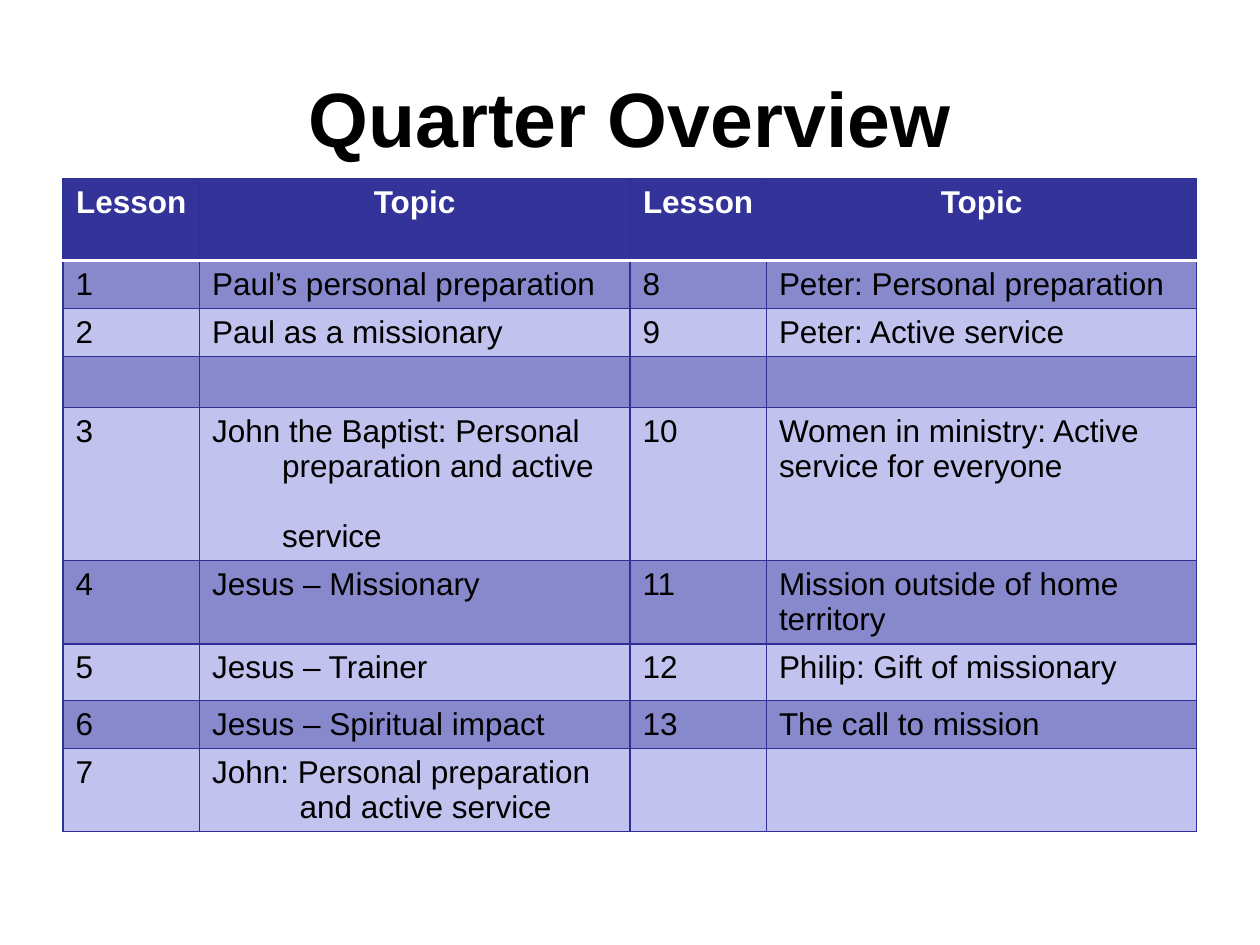
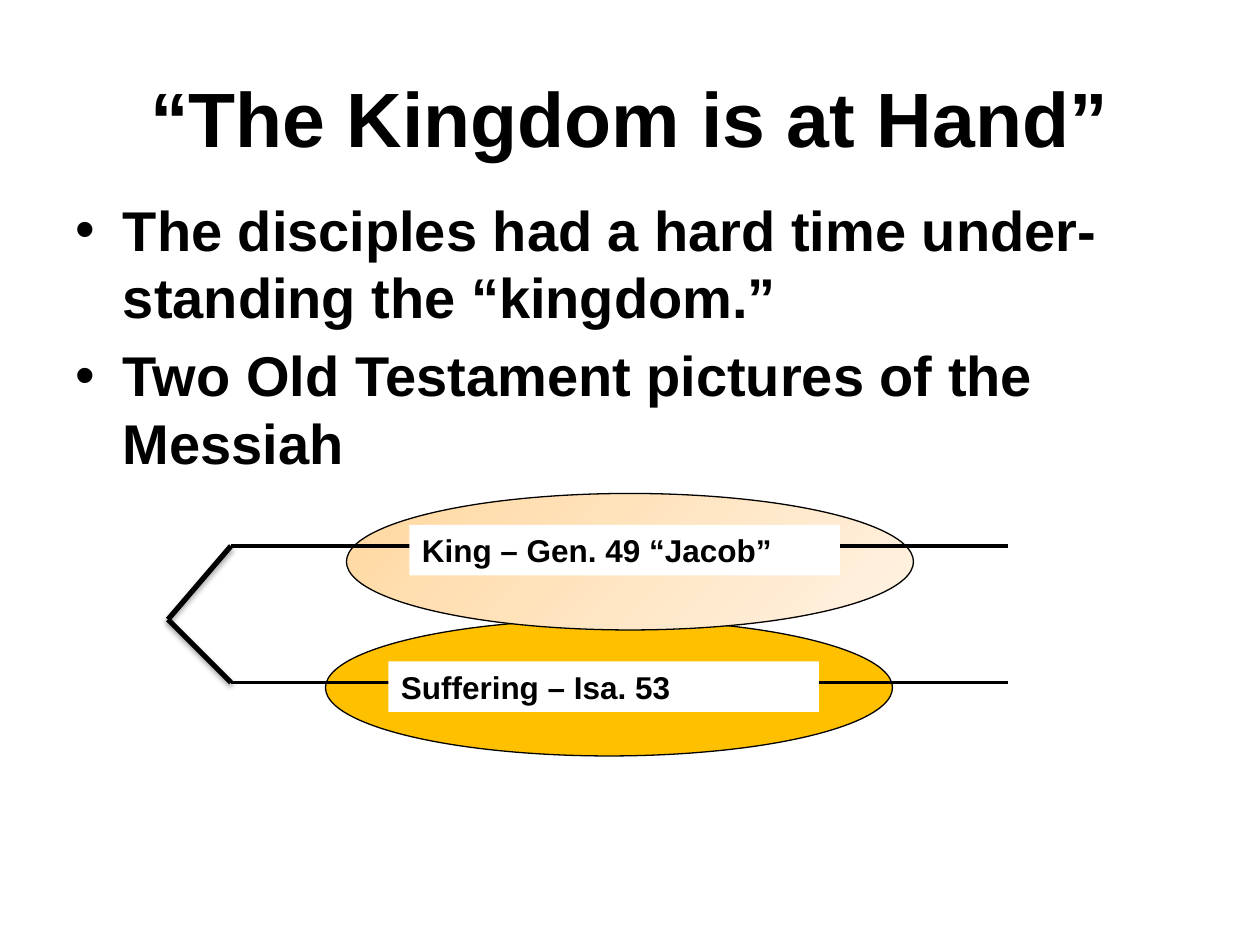
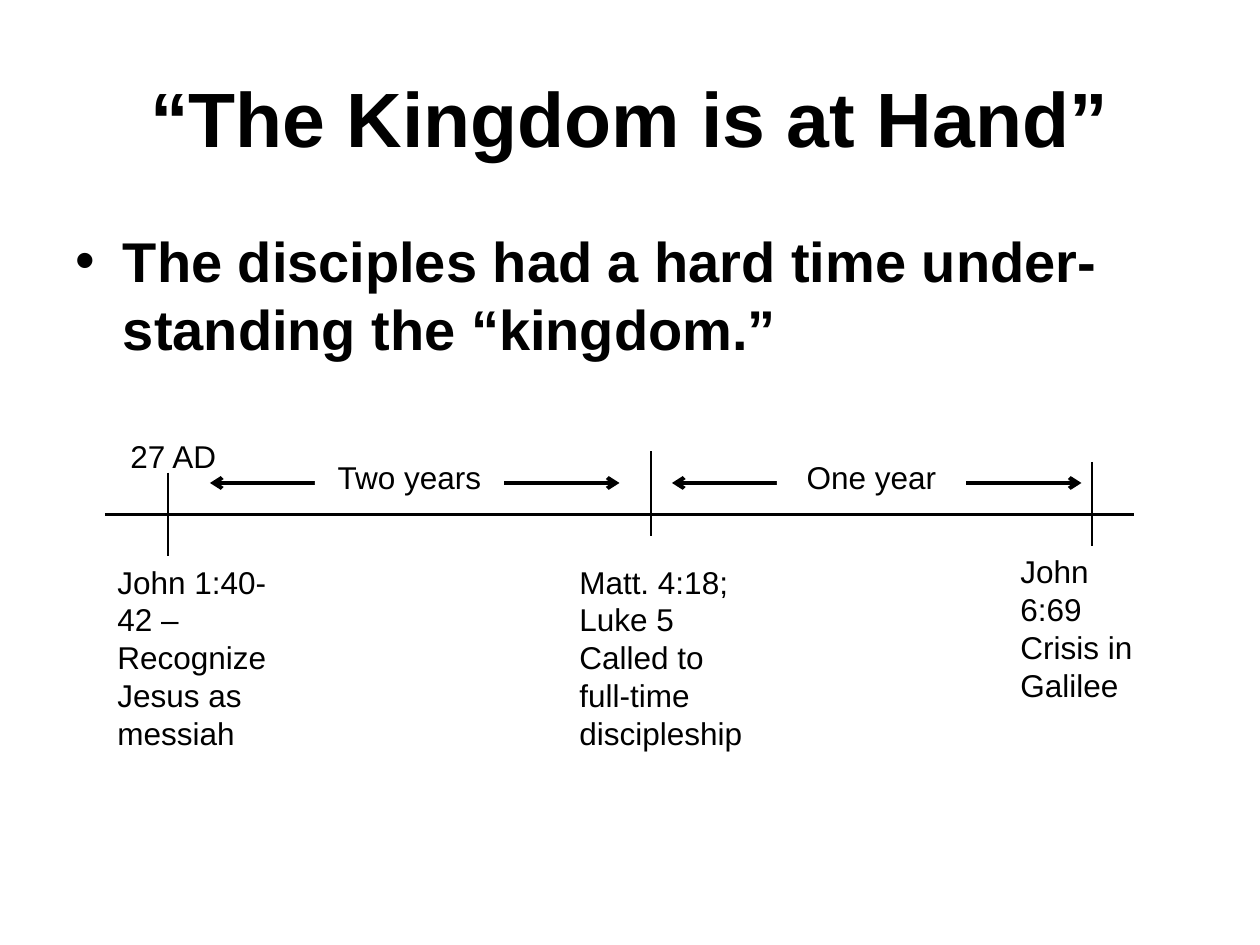
from dataclasses import dataclass

from lxml import etree
from pptx import Presentation
from pptx.dml.color import RGBColor
from pptx.enum import shapes, text
from pptx.oxml.ns import qn
from pptx.util import Emu, Inches, Pt

CELL = Inches(1) // 12  # the slide is a grid of 120 columns by 90 rows


@dataclass(frozen=True)
class Theme:
    font: str = "Arial"
    ink: str = "000000"
    paper: str = "FFFFFF"
    head: str = "333399"
    dark: str = "8888CC"
    light: str = "C2C2EE"
    edge: str = "2F2F98"
    gold: str = "FFC000"
    peach: tuple[str, str] = ("FFD8A0", "FFF2E3")
    title: int = 44
    body: int = 32
    small: int = 18
    thin: float = 0.75
    rule: float = 2.25
    thick: float = 3


THEME = Theme()


@dataclass(frozen=True)
class Box:
    """A place on the grid, in columns and rows."""
    col: float
    row: float
    wide: float
    high: float

    def place(self) -> tuple[Emu, ...]:
        return tuple(grid(n) for n in (self.col, self.row, self.wide, self.high))


@dataclass(frozen=True)
class Label:
    box: Box
    words: str
    bold: bool = False
    center: bool = False
    plate: bool = False


@dataclass(frozen=True)
class Line:
    start: tuple[float, float]
    end: tuple[float, float]
    width: float = THEME.rule
    arrows: bool = False
    shadow: bool = False


@dataclass(frozen=True)
class Topic:
    """A cell whose later lines are set in by some points."""
    words: str
    inset: float = 0
    gap: float = 0  # space before the last line


TITLE = Box(6, 3.6, 108, 15)
TABLE = Box(6, 17, 108, 61.2)
COLS = (13, 41, 13, 41)
KINGDOM = "“The Kingdom is at Hand”"
HARD = "The disciples had a hard time under-standing the “kingdom.”"

LESSONS = [
    (0.65, "Lesson", "Topic", "Lesson", "Topic"),
    (0.35, "1", "Paul’s personal preparation", "8", "Peter: Personal preparation"),
    (0.35, "2", "Paul as a missionary", "9", "Peter: Active service"),
    (0.35, "", "", "", ""),
    (0.88, "3", Topic("John the Baptist: Personal\npreparation and active\nservice", 40, 20),
     "10", "Women in ministry: Active service for everyone"),
    (0.62, "4", "Jesus – Missionary", "11", "Mission outside of home territory"),
    (0.45, "5", "Jesus – Trainer", "12", "Philip: Gift of missionary"),
    (0.35, "6", "Jesus – Spiritual impact", "13", "The call to mission"),
    (0.62, "7", Topic("John: Personal preparation\nand active service", 50), "", ""),
]

FORK = [
    Line((22, 52), (96, 52)),
    Line((22, 65), (96, 65)),
    Line((22, 52), (16, 59), THEME.thick, shadow=True),
    Line((16, 59), (22, 65), THEME.thick, shadow=True),
]
SIDES = [
    Label(Box(39, 50, 41, 4.8), "King – Gen. 49 “Jacob”", bold=True, plate=True),
    Label(Box(37, 63, 41, 4.8), "Suffering – Isa. 53", bold=True, plate=True),
]

SPANS = [Line((col, 46), (col + 39, 46), arrows=True) for col in (20, 64)]
TICKS = [Line((col, row), (col, row + 8), THEME.thin)
         for col, row in ((16, 45), (62, 43), (104, 44))]
AXIS = Line((10, 49), (108, 49))
EVENTS = [
    Label(Box(10, 41, 13, 4.8), "27 AD", center=True),
    Label(Box(10, 53, 17, 19.4), "John 1:40-42 – Recognize Jesus as messiah"),
    Label(Box(54, 53, 19, 19.4), "Matt. 4:18; Luke 5\nCalled to full-time discipleship"),
    Label(Box(96, 52, 15, 15.7), "John 6:69\nCrisis in Galilee"),
    Label(Box(30, 43, 18, 4.8), "Two years", center=True, plate=True),
    Label(Box(74, 43, 18, 4.8), "One year", center=True, plate=True),
]


def grid(count: float) -> Emu:
    return Emu(round(count * CELL))


def rgb(code: str) -> RGBColor:
    return RGBColor.from_string(code)


def style(frame, size: int, bold: bool = False, color: str = THEME.ink, align=None) -> None:
    for para in frame.paragraphs:
        if align is not None:
            para.alignment = align
        for run in para.runs:
            font = run.font
            font.name, font.size, font.bold = THEME.font, Pt(size), bold
            font.color.rgb = rgb(color)


def fill_in(holder, box: Box, words: str, size: int) -> None:
    holder.left, holder.top, holder.width, holder.height = box.place()
    frame = holder.text_frame
    frame.text = words
    frame.auto_size = text.MSO_AUTO_SIZE.NONE
    frame.paragraphs[0].space_before = Pt(0)
    style(frame, size, bold=True)


def new_slide(deck, title: str, points: str = "", box: Box | None = None):
    """Add a slide with a title and, if given a box, a bullet list."""
    slide = deck.slides.add_slide(deck.slide_layouts[1 if box else 5])
    fill_in(slide.shapes.title, TITLE, title, THEME.title)
    if box:
        fill_in(slide.placeholders[1], box, points, THEME.body)
    return slide


def draw_label(slide, label: Label) -> None:
    if label.plate:
        shape = slide.shapes.add_shape(shapes.MSO_SHAPE.RECTANGLE, *label.box.place())
        shape.shadow.inherit = False
        shape.fill.solid()
        shape.fill.fore_color.rgb = rgb(THEME.paper)
        shape.line.fill.background()
    else:
        shape = slide.shapes.add_textbox(*label.box.place())
    frame = shape.text_frame
    frame.text = label.words
    frame.word_wrap = True
    frame.vertical_anchor = text.MSO_ANCHOR.TOP
    frame.auto_size = text.MSO_AUTO_SIZE.SHAPE_TO_FIT_TEXT
    align = text.PP_ALIGN.CENTER if label.center else text.PP_ALIGN.LEFT
    style(frame, THEME.small, label.bold, align=align)


def draw_line(slide, line: Line) -> None:
    ends = [grid(n) for n in (*line.start, *line.end)]
    shape = slide.shapes.add_connector(shapes.MSO_CONNECTOR.STRAIGHT, *ends)
    shape.line.color.rgb = rgb(THEME.ink)
    shape.line.width = Pt(line.width)
    props = shape._element.spPr
    if line.arrows:
        for tag in ("a:headEnd", "a:tailEnd"):
            etree.SubElement(props.find(qn("a:ln")), qn(tag), type="arrow")
    effect = etree.SubElement(props, qn("a:effectLst"))
    if line.shadow:
        cast = etree.SubElement(effect, qn("a:outerShdw"), blurRad=str(Pt(3.1)),
                                dist=str(Pt(1.8)), dir="5400000", rotWithShape="0")
        tint = etree.SubElement(cast, qn("a:srgbClr"), val=THEME.ink)
        etree.SubElement(tint, qn("a:alpha"), val="35000")


def draw_oval(slide, box: Box):
    oval = slide.shapes.add_shape(shapes.MSO_SHAPE.OVAL, *box.place())
    oval.shadow.inherit = False
    oval.line.color.rgb = rgb(THEME.ink)
    oval.line.width = Pt(THEME.thin)
    return oval


def set_edge(cell, side: str, color: str, width: float) -> None:
    line = etree.SubElement(cell._tc.get_or_add_tcPr(), qn(f"a:ln{side}"), w=str(Pt(width)))
    solid = etree.SubElement(line, qn("a:solidFill"))
    etree.SubElement(solid, qn("a:srgbClr"), val=color)


def draw_cell(cell, row: int, topic: Topic) -> None:
    head = row == 0
    white = {0: "B", 1: "T"}.get(row)  # the rule under the header
    for side in "LRTB":
        if side == white:
            set_edge(cell, side, THEME.paper, 2)
        else:
            set_edge(cell, side, THEME.edge, THEME.thin)
    cell.fill.solid()
    shade = THEME.head if head else THEME.dark if row % 2 else THEME.light
    cell.fill.fore_color.rgb = rgb(shade)
    frame = cell.text_frame
    frame.text = topic.words
    for para in frame.paragraphs[1:]:
        para._p.get_or_add_pPr().set("marL", str(Pt(topic.inset)))
    if topic.gap:
        frame.paragraphs[-1].space_before = Pt(topic.gap)
    style(frame, THEME.small, head, THEME.paper if head else THEME.ink,
          text.PP_ALIGN.CENTER if head else text.PP_ALIGN.LEFT)


def show_plan(deck) -> None:
    slide = new_slide(deck, "Quarter Overview")
    frame = slide.shapes.add_table(len(LESSONS), len(COLS), *TABLE.place())
    table = frame.table
    for col, wide in zip(table.columns, COLS):
        col.width = grid(wide)
    for row, (high, *topics) in enumerate(LESSONS):
        table.rows[row].height = Inches(high)
        for col, topic in enumerate(topics):
            entry = topic if isinstance(topic, Topic) else Topic(topic)
            draw_cell(table.cell(row, col), row, entry)
    frame.height = grid(TABLE.high)


def show_fork(deck) -> None:
    points = f"{HARD}\nTwo Old Testament pictures of the Messiah"
    slide = new_slide(deck, KINGDOM, points, Box(6, 18, 108, 28))
    lower = draw_oval(slide, Box(31, 59, 54, 13))
    lower.fill.solid()
    lower.fill.fore_color.rgb = rgb(THEME.gold)
    upper = draw_oval(slide, Box(33, 47, 54, 13))
    upper.fill.gradient()
    upper.fill.gradient_angle = 315
    for stop, color in zip(upper.fill.gradient_stops, THEME.peach):
        stop.color.rgb = rgb(color)
    for line in FORK:
        draw_line(slide, line)
    for label in SIDES:
        draw_label(slide, label)


def show_years(deck) -> None:
    slide = new_slide(deck, KINGDOM, HARD, Box(6, 21, 108, 14))
    for line in (AXIS, *TICKS, *SPANS):
        draw_line(slide, line)
    for label in EVENTS:
        draw_label(slide, label)


def main() -> None:
    deck = Presentation()
    deck.slide_width, deck.slide_height = grid(120), grid(90)
    show_plan(deck)
    show_fork(deck)
    show_years(deck)
    deck.save("out.pptx")


if __name__ == "__main__":
    main()
